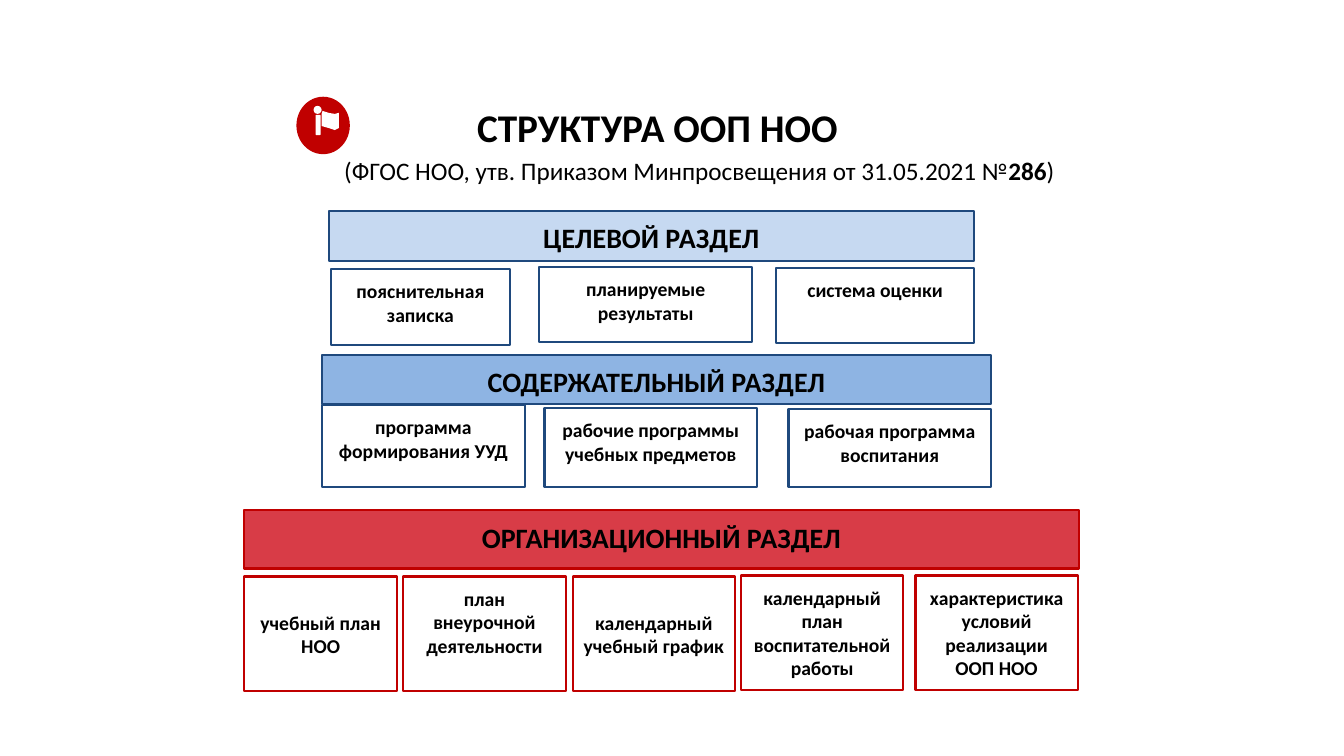
from pptx import Presentation
from pptx import util as u
from pptx.dml.color import RGBColor
from pptx.enum import shapes, text

PX = 9144
RECT = shapes.MSO_SHAPE.RECTANGLE
OVAL = shapes.MSO_SHAPE.OVAL
TOP, MIDDLE = text.MSO_ANCHOR.TOP, text.MSO_ANCHOR.MIDDLE
NAVY, RED, WHITE, BLACK = "1F497D", "C00000", "FFFFFF", "000000"

GOAL_PARTS = [
    (2, 58, 178, 75, "пояснительная записка", TOP),
    (209, 56, 211, 74, "планируемые результаты", TOP),
    (444, 57, 196, 74, "система оценки", TOP),
]
CONTENT_PARTS = [
    (0, 50, 202, 81, "программа формирования УУД", TOP),
    (221, 53, 211, 78, "рабочие программы учебных предметов", TOP),
    (463, 54, 201, 77, "рабочая программа воспитания", TOP),
]
ORGANISATION_PARTS = [
    (0, 66, 152, 114, "учебный план НОО", MIDDLE),
    (158, 66, 161, 114, "план внеурочной деятельности", TOP),
    (326, 66, 161, 114, "календарный учебный график", MIDDLE),
    (493, 65, 161, 114, "календарный план воспитательной работы", TOP),
    (666, 65, 161, 114, "характеристика условий реализации ООП НОО", TOP),
]


def rgb(code):
    """Turn a hex string into a colour."""
    return RGBColor.from_string(code)


def paint(shape, fill=None, line=None):
    """Set the fill and outline of a shape and drop its shadow."""
    shape.shadow.inherit = False
    if fill:
        shape.fill.solid()
        shape.fill.fore_color.rgb = rgb(fill)
    else:
        shape.fill.background()
    if line:
        shape.line.color.rgb = rgb(line)
        shape.line.width = u.Pt(1.5)
    else:
        shape.line.fill.background()


def write(shape, runs, size, anchor=TOP):
    """Write centred runs, given as (words, bold) pairs."""
    frame = shape.text_frame
    frame.word_wrap = True
    frame.vertical_anchor = anchor
    frame.margin_left = frame.margin_right = 10 * PX
    frame.margin_top = frame.margin_bottom = 10 * PX
    paragraph = frame.paragraphs[0]
    paragraph.alignment = text.PP_ALIGN.CENTER
    for words, bold in runs:
        run = paragraph.add_run()
        run.text = words
        run.font.name = "Calibri"
        run.font.size = u.Pt(size)
        run.font.bold = bold
        run.font.color.rgb = rgb(BLACK)


def add_preset(slide, preset, box, fill=None, line=None):
    """Add a painted preset shape in a px box."""
    shape = slide.shapes.add_shape(preset, *(n * PX for n in box))
    paint(shape, fill, line)
    return shape


def add_heading(slide, left, top):
    """Place the title and the subtitle below it."""
    title = slide.shapes.add_textbox(left * PX, top * PX, 710 * PX, 75 * PX)
    write(title, [("СТРУКТУРА ООП НОО", True)], 28)
    subtitle = slide.shapes.add_textbox((left + 20) * PX, (top + 52) * PX, 753 * PX, 52 * PX)
    write(subtitle, [("(ФГОС НОО, утв. Приказом Минпросвещения от 31.05.2021 №", False),
                     ("286", True), (")", False)], 18)


def add_flag_badge(slide, left, top):
    """Draw a white figure with a flag on a red disc."""
    add_preset(slide, OVAL, (left, top, 53, 57), RED)
    add_preset(slide, OVAL, (left + 17, top + 9, 8, 8), WHITE)
    add_preset(slide, shapes.MSO_SHAPE.ROUNDED_RECTANGLE, (left + 19, top + 18, 5, 20), WHITE)
    flag = [(26, 14), (32, 16), (38, 17), (42, 16), (42, 31), (38, 33), (32, 31), (25, 29), (25, 17)]
    outline = [(left + x, top + y) for x, y in flag]
    builder = slide.shapes.build_freeform(*outline[0], scale=PX)
    builder.add_line_segments(outline[1:], close=True)
    paint(builder.convert_to_shape(), WHITE)


def add_section(slide, box, name, fill, line, parts):
    """Place a section bar and its parts, offset from the bar's corner."""
    left, top = box[:2]
    for dx, dy, width, height, words, anchor in parts:
        part = add_preset(slide, RECT, (left + dx, top + dy, width, height), line=line)
        write(part, [(words, True)], 14, anchor)
    bar = add_preset(slide, RECT, box, fill, line)
    write(bar, [(name, True)], 20)


def main():
    """Build the programme structure slide."""
    deck = Presentation()
    deck.slide_width, deck.slide_height = 1333 * PX, 750 * PX
    slide = deck.slides.add_slide(deck.slide_layouts[6])
    add_heading(slide, 297, 92)
    add_section(slide, (326, 209, 640, 50), "ЦЕЛЕВОЙ РАЗДЕЛ", "C6D9F1", NAVY, GOAL_PARTS)
    add_section(slide, (319, 352, 664, 49), "СОДЕРЖАТЕЛЬНЫЙ РАЗДЕЛ", "8EB4E3", NAVY, CONTENT_PARTS)
    add_section(slide, (242, 506, 828, 58), "ОРГАНИЗАЦИОННЫЙ РАЗДЕЛ", "D83C47", RED, ORGANISATION_PARTS)
    add_flag_badge(slide, 294, 96)
    deck.save("out.pptx")


if __name__ == "__main__":
    main()
